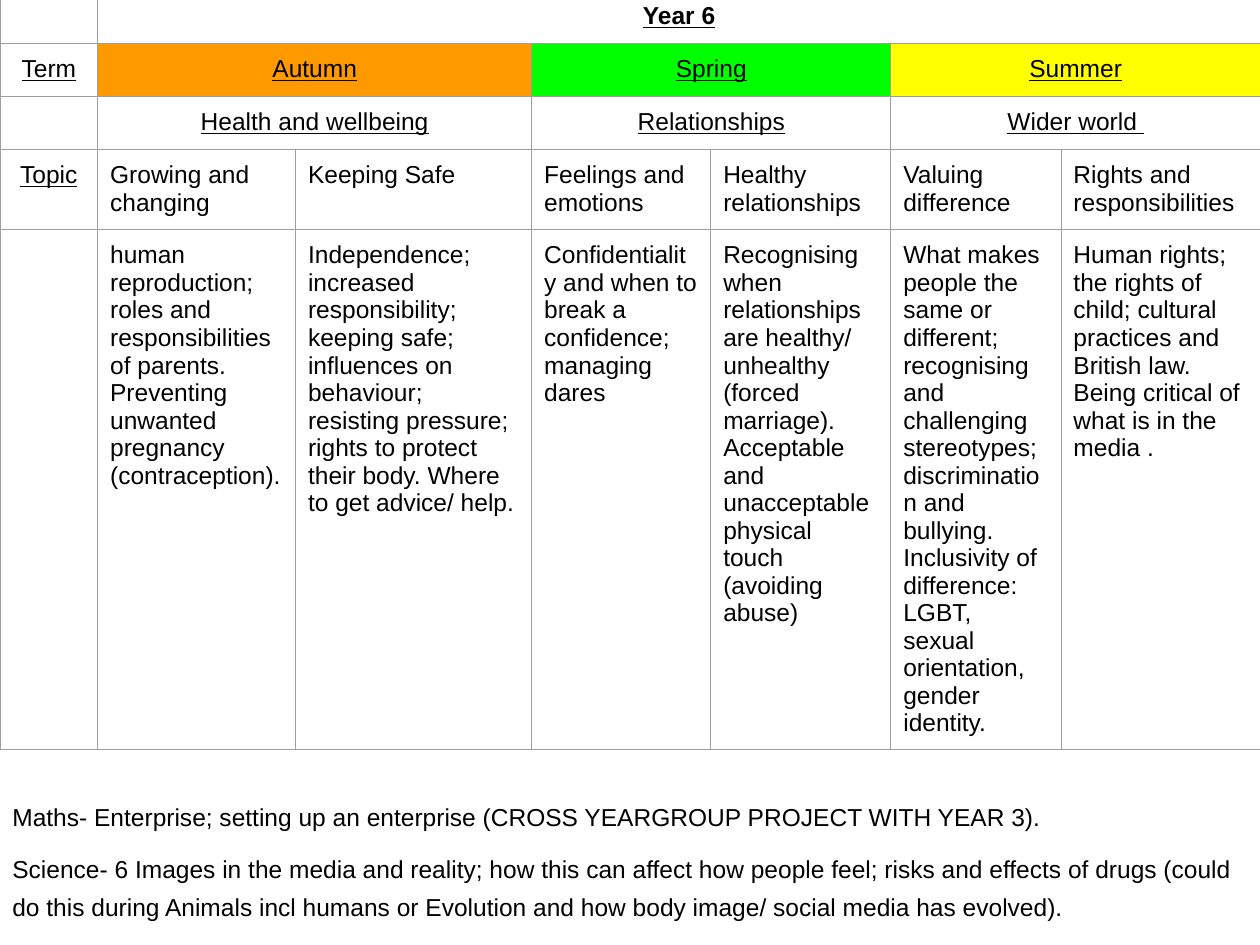
from lxml import etree
from pptx import Presentation
from pptx.dml.color import RGBColor
from pptx.enum import text
from pptx.oxml.ns import qn
from pptx.util import Cm, Pt

THEME = {
    "font": "Arial", "size": 14, "ink": "000000", "grid": "9E9E9E", "grid_width": 0.75,
    "autumn": "FF9900", "spring": "00FF00", "summer": "FFFF00",
}
MARGIN = 0.25
TABLE_TOP = -0.2
COLUMNS = [1.97, 3.99, 4.76, 3.61, 3.63, 3.43, 4.02]
ROWS = [1.07, 1.07, 1.07, 1.61, 10.48]

TITLE = "Year 6"
ROW_LABELS = {1: "Term", 3: "Topic"}
TERMS = [
    ("Autumn", "Health and wellbeing", [
        ("Growing and changing",
         "human reproduction; roles and responsibilities of parents. Preventing unwanted "
         "pregnancy (contraception)."),
        ("Keeping Safe",
         "Independence; increased responsibility; keeping safe; influences on behaviour; "
         "resisting pressure; rights to protect their body. Where to get advice/ help."),
    ]),
    ("Spring", "Relationships", [
        ("Feelings and emotions",
         "Confidentiality and when to break a confidence; managing dares"),
        ("Healthy relationships",
         "Recognising when relationships are healthy/ unhealthy (forced marriage). Acceptable "
         "and unacceptable physical touch (avoiding abuse)"),
    ]),
    ("Summer", "Wider world ", [
        ("Valuing difference",
         "What makes people the same or different; recognising and challenging stereotypes; "
         "discrimination and bullying. Inclusivity of difference: LGBT, sexual orientation, "
         "gender identity."),
        ("Rights and responsibilities",
         "Human rights; the rights of child; cultural practices and British law. Being critical "
         "of what is in the media ."),
    ]),
]
NOTES = [
    "Maths- Enterprise; setting up an enterprise (CROSS YEARGROUP PROJECT WITH YEAR 3).",
    "Science- 6 Images in the media and reality; how this can affect how people feel; risks and "
    "effects of drugs (could do this during Animals incl humans or Evolution and how body image/ "
    "social media has evolved).",
]


def write(p, words, bold=False, underline=False, center=False, spacing=None, before=None):
    p.alignment = text.PP_ALIGN.CENTER if center else text.PP_ALIGN.LEFT
    if spacing:
        p.line_spacing = spacing
    if before:
        p.space_before = Pt(before)
    r = p.add_run()
    r.text = words
    r.font.name = THEME["font"]
    r.font.size = Pt(THEME["size"])
    r.font.bold = bold
    r.font.underline = underline
    r.font.color.rgb = RGBColor.from_string(THEME["ink"])


def pad(box):
    box.margin_left = box.margin_right = box.margin_top = box.margin_bottom = Cm(MARGIN)


def outline(cell):
    tc_pr = cell._tc.get_or_add_tcPr()
    for i, side in enumerate(("a:lnL", "a:lnR", "a:lnT", "a:lnB")):
        ln = etree.Element(qn(side), w=str(Pt(THEME["grid_width"])))
        fill = etree.SubElement(ln, qn("a:solidFill"))
        etree.SubElement(fill, qn("a:srgbClr"), val=THEME["grid"])
        tc_pr.insert(i, ln)


def fill_cell(table, row, col, words, span=1, color=None, **style):
    cell = table.cell(row, col)
    if span > 1:
        cell.merge(table.cell(row, col + span - 1))
    pad(cell)
    write(cell.text_frame.paragraphs[0], words, **style)
    if color:
        cell.fill.solid()
        cell.fill.fore_color.rgb = RGBColor.from_string(color)


def add_curriculum(s):
    table = s.shapes.add_table(len(ROWS), len(COLUMNS), Cm(0), Cm(TABLE_TOP),
                               Cm(sum(COLUMNS)), Cm(sum(ROWS))).table
    table.first_row = table.horz_banding = False
    for column, width in zip(table.columns, COLUMNS):
        column.width = Cm(width)
    for row, height in zip(table.rows, ROWS):
        row.height = Cm(height)
    for cell in table.iter_cells():
        cell.fill.background()

    heading = {"underline": True, "center": True}
    fill_cell(table, 0, 1, TITLE, span=len(COLUMNS) - 1, bold=True, **heading)
    for row, label in ROW_LABELS.items():
        fill_cell(table, row, 0, label, **heading)
    col = 1
    for term, theme, topics in TERMS:
        fill_cell(table, 1, col, term, span=len(topics), color=THEME[term.lower()], **heading)
        fill_cell(table, 2, col, theme, span=len(topics), **heading)
        for topic, detail in topics:
            fill_cell(table, 3, col, topic)
            fill_cell(table, 4, col, detail)
            col += 1
    for cell in table.iter_cells():
        outline(cell)


def add_notes(s):
    tf = s.shapes.add_textbox(Cm(0), Cm(15.75), Cm(25.4), Cm(3.3)).text_frame
    tf.word_wrap = True
    pad(tf)
    for i, note in enumerate(NOTES):
        p = tf.add_paragraph() if i else tf.paragraphs[0]
        write(p, note, spacing=1.29, before=8 if i else None)


def main():
    prs = Presentation()
    prs.slide_width, prs.slide_height = Cm(25.4), Cm(19.05)
    s = prs.slides.add_slide(prs.slide_layouts[6])
    add_curriculum(s)
    add_notes(s)
    prs.save("out.pptx")


if __name__ == "__main__":
    main()
